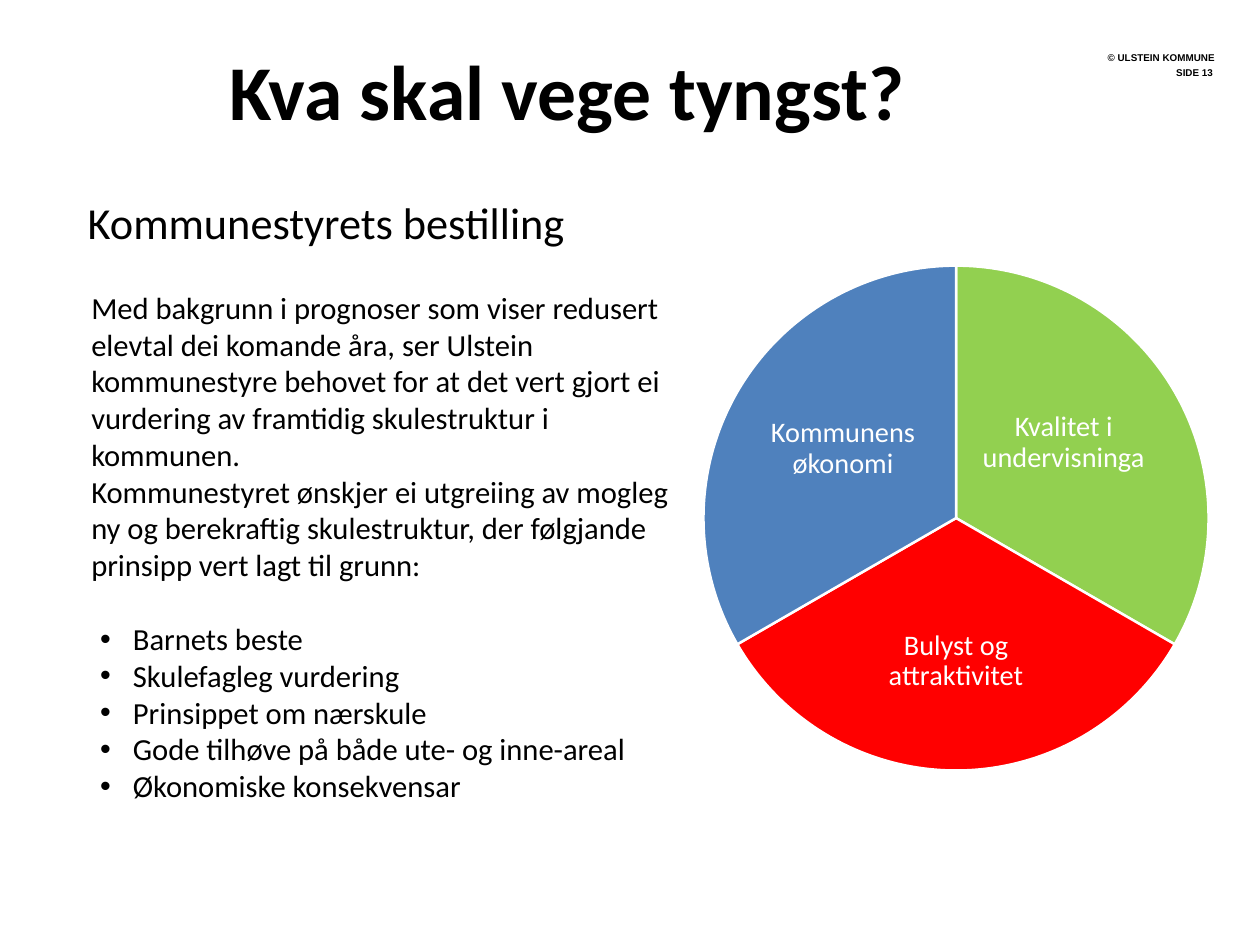
import pptx
import pptx.util
from lxml import etree
from pptx.dml.color import RGBColor
from pptx.enum.shapes import MSO_SHAPE
from pptx.enum.text import MSO_ANCHOR, MSO_AUTO_SIZE, PP_ALIGN
from pptx.oxml.ns import qn
from pptx.util import Inches

THEME = {
    "black": RGBColor(0x00, 0x00, 0x00),
    "white": RGBColor(0xFF, 0xFF, 0xFF),
    "quality": RGBColor(0x92, 0xD0, 0x50),
    "appeal": RGBColor(0xFF, 0x00, 0x00),
    "economy": RGBColor(0x4F, 0x81, 0xBD),
    "font": "Calibri",
    "mark_font": "Arial",
    "title": 63,
    "heading": 36,
    "body": 24.9,
    "label": 23,
    "mark": 8,
}


def place(shape, box, inset=(0.1, 0.05), anchor=MSO_ANCHOR.TOP):
    """Position a text shape and return its prepared text frame."""
    shape.left, shape.top, shape.width, shape.height = map(Inches, box)
    frame = shape.text_frame
    frame.word_wrap = True
    frame.auto_size = MSO_AUTO_SIZE.NONE
    frame.vertical_anchor = anchor
    frame.margin_left = frame.margin_right = Inches(inset[0])
    frame.margin_top = frame.margin_bottom = Inches(inset[1])
    return frame


def write(paragraph, text, size, color="black", font="font", bold=False,
          align=PP_ALIGN.LEFT, bullet=False, before=0):
    properties = paragraph._p.get_or_add_pPr()
    properties.set("marL", str(Inches(0.47 if bullet else 0)))
    properties.set("indent", str(Inches(-0.37 if bullet else 0)))
    if bullet:
        etree.SubElement(properties, qn("a:buFont"), typeface="Arial")
        etree.SubElement(properties, qn("a:buChar"), char="•")
    else:
        etree.SubElement(properties, qn("a:buNone"))
    paragraph.alignment = align
    paragraph.space_before = pptx.util.Pt(before)
    run = paragraph.add_run()
    run.text = text
    run.font.name = THEME[font]
    run.font.size = pptx.util.Pt(THEME[size])
    run.font.bold = bold
    run.font.color.rgb = THEME[color]


presentation = pptx.Presentation()
presentation.slide_width = Inches(14.22)
presentation.slide_height = Inches(10.67)
slide = presentation.slides.add_slide(presentation.slide_layouts[3])
title, principles, heading = slide.placeholders

title_frame = place(title, (0, 0.43, 12.8, 1.78))
write(title_frame.paragraphs[0], "Kva skal vege tyngst?", "title",
      bold=True, align=PP_ALIGN.CENTER)

heading_frame = place(heading, (0.89, 2.16, 6.32, 0.78))
write(heading_frame.paragraphs[0], "Kommunestyrets bestilling", "heading")

# Text, bulleted, points of space before
principle_lines = [
    ("Med bakgrunn i prognoser som viser redusert elevtal dei komande åra, "
     "ser Ulstein kommunestyre behovet for at det vert gjort ei vurdering av "
     "framtidig skulestruktur i kommunen.", False, 0),
    ("Kommunestyret ønskjer ei utgreiing av mogleg ny og berekraftig "
     "skulestruktur, der følgjande prinsipp vert lagt til grunn:", False, 0),
    ("Barnets beste", True, 30.4),
    ("Skulefagleg vurdering", True, 0),
    ("Prinsippet om nærskule", True, 0),
    ("Gode tilhøve på både ute- og inne-areal", True, 0),
    ("Økonomiske konsekvensar", True, 0),
]
principles_frame = place(principles, (0.93, 3.21, 6.74, 6.79))
for index, (text, bullet, before) in enumerate(principle_lines):
    paragraph = principles_frame.add_paragraph() if index else principles_frame.paragraphs[0]
    write(paragraph, text, "body", bullet=bullet, before=before)

# Pie adjustments count in units of 100000, where one degree is 60000
concerns = [
    ("Kvalitet i undervisninga", "quality", 270, 30, (11.04, 4.05, 1.93, 1.9)),
    ("Bulyst og attraktivitet", "appeal", 30, 150, (9.5, 6.59, 2.58, 1.76)),
    ("Kommunens økonomi", "economy", 150, 270, (8.55, 4.12, 1.93, 1.9)),
]
for text, color, start, end, label_box in concerns:
    sector = slide.shapes.add_shape(
        MSO_SHAPE.PIE, Inches(7.94), Inches(3), Inches(5.7), Inches(5.7))
    sector.adjustments[0] = start * 0.6
    sector.adjustments[1] = end * 0.6
    sector.shadow.inherit = False
    sector.fill.solid()
    sector.fill.fore_color.rgb = THEME[color]
    sector.line.color.rgb = THEME["white"]
    sector.line.width = pptx.util.Pt(2)

    label = slide.shapes.add_textbox(0, 0, 0, 0)
    label_frame = place(label, label_box, (0.03, 0.03), MSO_ANCHOR.MIDDLE)
    write(label_frame.paragraphs[0], text, "label", "white", align=PP_ALIGN.CENTER)
    label_frame.paragraphs[0].line_spacing = 0.9

page_marks = [
    ("SIDE 13", (10.51, 0.53, 3.32, 0.57), (0.14, 0.07), MSO_ANCHOR.MIDDLE),
    ("© ULSTEIN KOMMUNE", (12.39, 0.53, 1.42, 0.24), (0.1, 0.05), MSO_ANCHOR.TOP),
]
for text, box, inset, anchor in page_marks:
    mark_frame = place(slide.shapes.add_textbox(0, 0, 0, 0), box, inset, anchor)
    mark_frame.word_wrap = False
    write(mark_frame.paragraphs[0], text, "mark", font="mark_font",
          bold=True, align=PP_ALIGN.RIGHT)

presentation.save("out.pptx")
